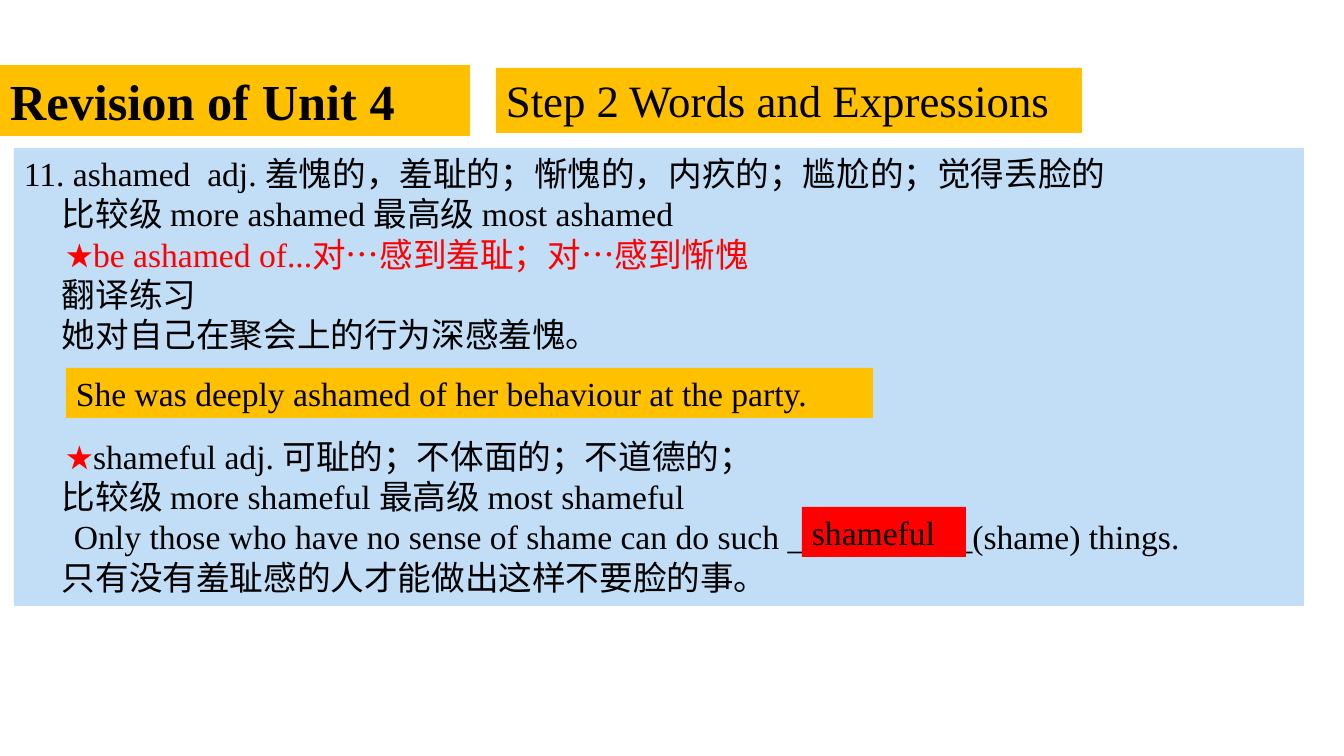
import pptx
import pptx.util
import pptx.dml.color
import pptx.enum.shapes
import pptx.enum.text

RGB = pptx.dml.color.RGBColor
GOLD = RGB(0xFF, 0xC0, 0x00)
SKY = RGB(0xC1, 0xDE, 0xF6)
RED = RGB(0xFF, 0x00, 0x00)
BLACK = RGB(0x00, 0x00, 0x00)
FONT = "Times New Roman"
WIDE, HIGH = 1344, 756
SCALE = 12192000 / WIDE
HAN, STAR, LATIN = 38, 42, 50

NOTES = [
    (0, 0, [("11. ashamed  adj. 羞愧的，羞耻的；惭愧的，内疚的；尴尬的；觉得丢脸的", BLACK)]),
    (HAN, 0, [("比较级 more ashamed 最高级 most ashamed", BLACK)]),
    (STAR, 0, [("★be ashamed of...对…感到羞耻；对…感到惭愧", RED)]),
    (HAN, 0, [("翻译练习", BLACK)]),
    (HAN, 0, [("她对自己在聚会上的行为深感羞愧。", BLACK)]),
    (STAR, 58, [("★", RED), ("shameful adj. 可耻的；不体面的；不道德的；", BLACK)]),
    (HAN, 0, [("比较级 more shameful 最高级 most shameful", BLACK)]),
    (LATIN, 0, [("Only those who have no sense of shame can do such "
                 "___________(shame) things.", BLACK)]),
    (HAN, 0, [("只有没有羞耻感的人才能做出这样不要脸的事。", BLACK)]),
]


def px(n):
    """Turn pixels into EMU."""
    return pptx.util.Emu(round(n * SCALE))


def write(para, text, size=24, color=BLACK, bold=False):
    """Add one formatted run to a paragraph."""
    run = para.add_run()
    run.text = text
    font = run.font
    font.name, font.size, font.bold = FONT, pptx.util.Pt(size), bold
    font.color.rgb = color


def panel(slide, box, fill):
    """Draw a plain filled box and return its text frame."""
    shape = slide.shapes.add_shape(
        pptx.enum.shapes.MSO_SHAPE.RECTANGLE, *map(px, box))
    shape.shadow.inherit = False
    shape.fill.solid()
    shape.fill.fore_color.rgb = fill
    shape.line.fill.background()
    frame = shape.text_frame
    frame.word_wrap = True
    frame.vertical_anchor = pptx.enum.text.MSO_ANCHOR.TOP
    frame.paragraphs[0].alignment = pptx.enum.text.PP_ALIGN.LEFT
    return frame


def label(slide, box, text, fill=GOLD, **form):
    """Place a box with one line of text."""
    write(panel(slide, box, fill).paragraphs[0], text, **form)


def header(slide, box):
    """Place the unit title and the step title side by side."""
    left, top, width, high = box
    label(slide, (left, top, 470, high), "Revision of Unit 4", size=36, bold=True)
    label(slide, (left + 496, top + 3, width - 496, high - 6),
          "Step 2 Words and Expressions", size=32)


def lesson(slide, box):
    """Place the word notes with the two answers on top."""
    left, top = box[:2]
    frame = panel(slide, box, SKY)
    for i, (indent, gap, runs) in enumerate(NOTES):
        para = frame.add_paragraph() if i else frame.paragraphs[0]
        para.alignment = pptx.enum.text.PP_ALIGN.LEFT
        props = para._p.get_or_add_pPr()
        props.set("marL", str(px(indent)))
        props.set("indent", "0")
        if gap:
            para.space_before = pptx.util.Pt(gap)
        for text, color in runs:
            write(para, text, color=color)
    label(slide, (left + 52, top + 220, 807, 50),
          "She was deeply ashamed of her behaviour at the party.")
    label(slide, (left + 788, top + 359, 164, 50), "shameful", fill=RED)


def main():
    """Build and save the slide."""
    deck = pptx.Presentation()
    deck.slide_width, deck.slide_height = px(WIDE), px(HIGH)
    slide = deck.slides.add_slide(deck.slide_layouts[6])
    header(slide, (0, 65, 1082, 71))
    lesson(slide, (14, 148, 1290, 458))
    deck.save("out.pptx")


if __name__ == "__main__":
    main()
